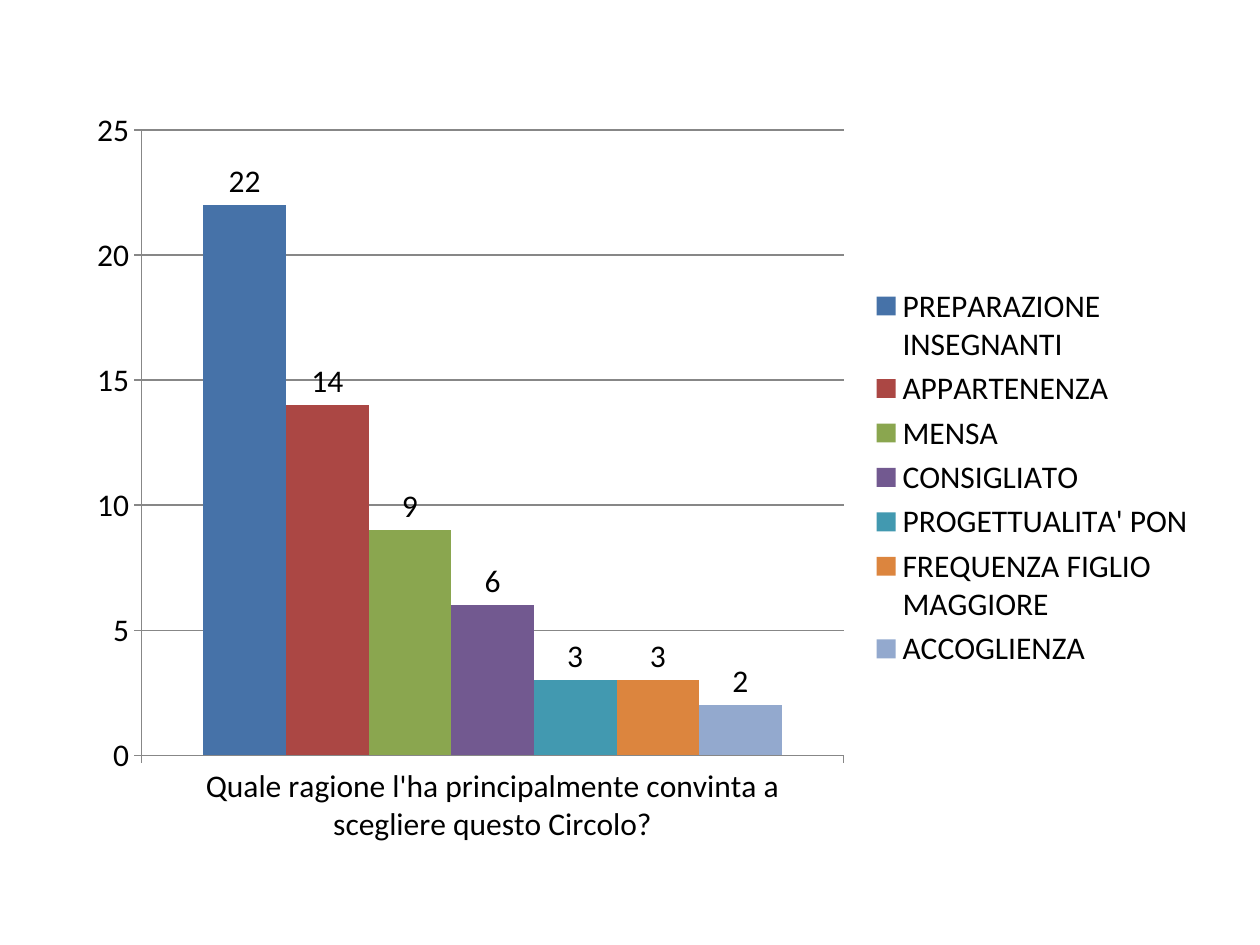
from dataclasses import dataclass

from pptx import Presentation
from pptx.chart.chart import Chart
from pptx.chart.data import CategoryChartData
from pptx.dml.color import RGBColor
from pptx.enum.chart import (
    XL_CHART_TYPE as ChartType,
    XL_LABEL_POSITION as LabelPos,
    XL_LEGEND_POSITION as LegendPos,
    XL_TICK_MARK as Tick,
)
from pptx.util import Cm, Pt


@dataclass(frozen=True)
class Theme:
    font: str = "Calibri"
    size: int = 18
    text: str = "000000"
    line: str = "878787"
    line_width: float = 0.75


@dataclass(frozen=True)
class Reason:
    name: str
    votes: int
    color: str


THEME = Theme()
QUESTION = "Quale ragione l'ha principalmente convinta a scegliere questo Circolo?"
REASONS = [
    Reason("PREPARAZIONE INSEGNANTI", 22, "4672A8"),
    Reason("APPARTENENZA", 14, "AB4744"),
    Reason("MENSA", 9, "8AA64F"),
    Reason("CONSIGLIATO", 6, "725990"),
    Reason("PROGETTUALITA' PON", 3, "4299B0"),
    Reason("FREQUENZA FIGLIO MAGGIORE", 3, "DC853E"),
    Reason("ACCOGLIENZA", 2, "93A9CE"),
]


def apply(target: object, values: dict) -> None:
    for name, value in values.items():
        setattr(target, name, value)


def style_line(line) -> None:
    line.color.rgb = RGBColor.from_string(THEME.line)
    line.width = Pt(THEME.line_width)


def style_text(chart: Chart) -> None:
    apply(chart.font, {"name": THEME.font, "size": Pt(THEME.size)})
    chart.font.color.rgb = RGBColor.from_string(THEME.text)


def style_axes(chart: Chart) -> None:
    ticks = {"major_tick_mark": Tick.OUTSIDE, "minor_tick_mark": Tick.NONE}
    scale = {"minimum_scale": 0, "maximum_scale": 25, "major_unit": 5}
    apply(chart.category_axis, ticks)
    apply(chart.value_axis, {**ticks, **scale, "has_major_gridlines": True})
    for part in (chart.category_axis, chart.value_axis, chart.value_axis.major_gridlines):
        style_line(part.format.line)


def style_bars(chart: Chart, reasons: list[Reason]) -> None:
    plot = chart.plots[0]
    apply(plot, {"gap_width": 150, "overlap": 0, "vary_by_categories": False})
    for series, reason in zip(plot.series, reasons):
        series.format.fill.solid()
        series.format.fill.fore_color.rgb = RGBColor.from_string(reason.color)
        apply(series.data_labels, {"show_value": True, "position": LabelPos.OUTSIDE_END})


def add_reasons_chart(s, reasons: list[Reason]) -> None:
    data = CategoryChartData()
    data.categories = [QUESTION]
    for reason in reasons:
        data.add_series(reason.name, [reason.votes])
    box = Cm(1.5), Cm(1.93), Cm(22.86), Cm(15.39)
    chart = s.shapes.add_chart(ChartType.COLUMN_CLUSTERED, *box, data).chart
    apply(chart, {"has_title": False, "has_legend": True})
    apply(chart.legend, {"position": LegendPos.RIGHT, "include_in_layout": False})
    style_text(chart)
    style_axes(chart)
    style_bars(chart, reasons)


def main() -> None:
    prs = Presentation()
    apply(prs, {"slide_width": Cm(25.4), "slide_height": Cm(19.05)})
    s = prs.slides.add_slide(prs.slide_layouts[6])
    add_reasons_chart(s, REASONS)
    prs.save("out.pptx")


if __name__ == "__main__":
    main()
